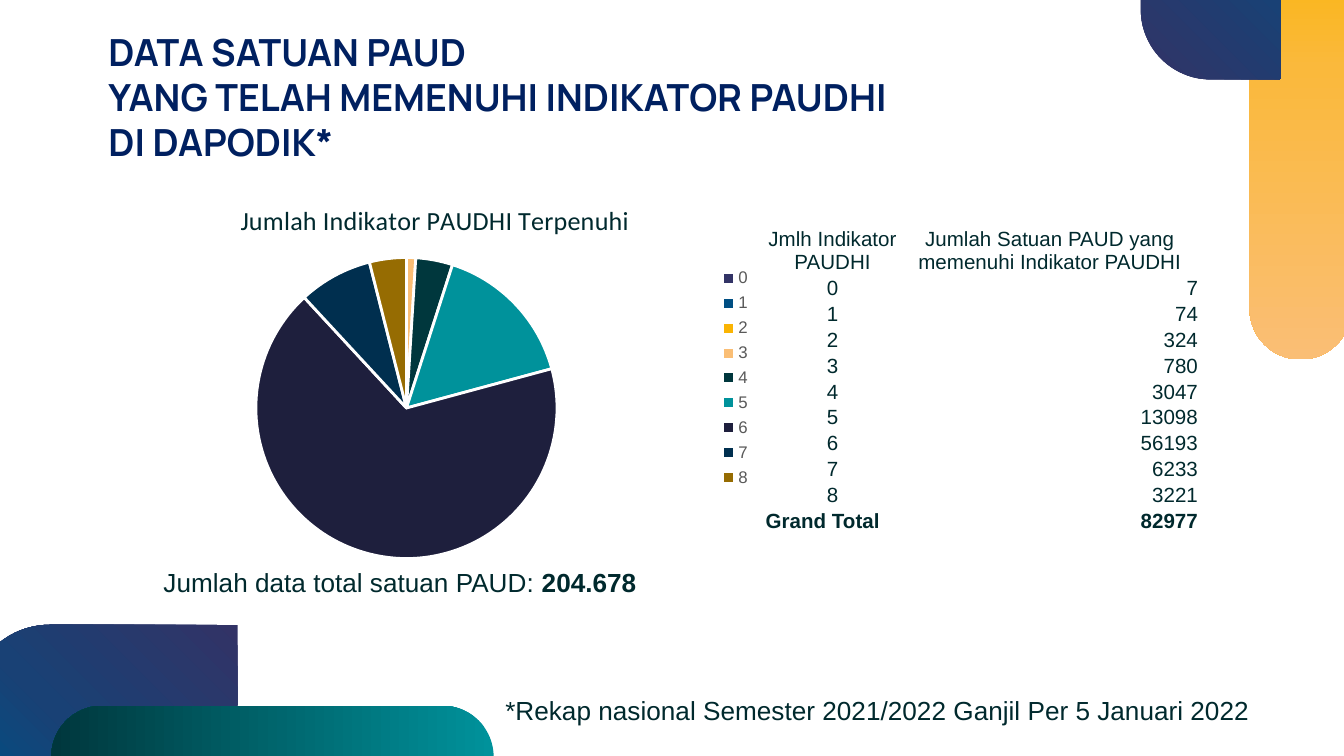
"""Build a slide on early-childhood units that meet the PAUDHI indicators."""
from dataclasses import dataclass
from typing import Optional

from lxml import etree
from pptx import Presentation
from pptx import util as u
from pptx.chart.data import CategoryChartData
from pptx.dml.color import RGBColor
from pptx.enum import chart as charts, shapes, text
from pptx.oxml import parse_xml
from pptx.oxml.ns import nsdecls, qn


@dataclass(frozen=True)
class Theme:
    heading: str = "002060"
    body: str = "00292D"
    chart_title: str = "00292E"
    legend: str = "595959"
    white: str = "FFFFFF"
    navy: tuple = ((0, "323366"), (63, "194175"), (100, "004F83"))
    teal: tuple = ((0, "00929B"), (100, "00373D"))
    amber: tuple = ((0, "FAB403"), (34, "FAB93C"), (100, "FABE75"))
    slices: tuple = ("323366", "004F83", "FAB403", "FABE75", "00373D",
                     "00929B", "1E1F3D", "002F4F", "966C02")
    heading_font: str = "Manrope"
    chart_title_font: str = "Calibri"
    body_font: str = "Arial"
    heading_size: int = 20
    note_size: int = 14
    table_size: int = 11
    legend_size: int = 9


@dataclass(frozen=True)
class Box:
    left: float
    top: float
    width: float
    height: float

    def lengths(self) -> tuple:
        return tuple(u.Cm(n) for n in (self.left, self.top, self.width, self.height))


@dataclass(frozen=True)
class Ornament:
    box: Box
    preset: shapes.MSO_SHAPE
    stops: tuple
    angle: int
    rotation: int = 0


@dataclass(frozen=True)
class Note:
    box: Box
    lines: tuple
    size: int
    font: str
    color: str
    bold: bool = False
    strong_ending: Optional[str] = None


THEME = Theme()
PRESETS = shapes.MSO_SHAPE
ORNAMENTS = (
    Ornament(Box(-0.56, 11.81, 5.05, 3.0), PRESETS.ROUND_2_DIAG_RECTANGLE, THEME.navy, 135),
    Ornament(Box(0.97, 13.34, 8.36, 1.93), PRESETS.ROUNDED_RECTANGLE, THEME.teal, 180),
    Ornament(Box(20.4, 1.65, 8.36, 1.93), PRESETS.ROUNDED_RECTANGLE, THEME.amber, 180, 270),
    Ornament(Box(21.56, -2.39, 2.64, 3.89), PRESETS.ROUND_1_RECTANGLE, THEME.navy, 135, 180),
)
HEADING = Note(
    Box(1.8, 0.43, 16.05, 2.82),
    ("DATA SATUAN PAUD", "YANG TELAH MEMENUHI INDIKATOR PAUDHI", "DI DAPODIK*"),
    THEME.heading_size, THEME.heading_font, THEME.heading, bold=True)
TOTAL = Note(Box(2.84, 10.59, 10.59, 0.86), ("Jumlah data total satuan PAUD: ",),
             THEME.note_size, THEME.body_font, THEME.body, strong_ending="204.678")
FOOTNOTE = Note(Box(9.3, 13.0, 17.73, 0.86),
                ("*Rekap nasional Semester 2021/2022 Ganjil Per 5 Januari 2022",),
                THEME.note_size, THEME.body_font, THEME.body)
UNIT_COUNTS = (7, 74, 324, 780, 3047, 13098, 56193, 6233, 3221)
PERCENTAGES = (0, 0, 0, 1, 4, 16, 68, 8, 4)


def style_font(font, size: int, name: str, color: str, bold: bool = False) -> None:
    """Apply size, typeface, colour and weight to a font."""
    font.size, font.name, font.bold = u.Pt(size), name, bold
    font.color.rgb = RGBColor.from_string(color)


def draw_ornament(slide, ornament: Ornament) -> None:
    """Draw a rounded corner ornament with a linear gradient."""
    corner = slide.shapes.add_shape(ornament.preset, *ornament.box.lengths())
    corner.adjustments[0] = 0.5
    corner.rotation = ornament.rotation
    corner.shadow.inherit = False
    corner.line.fill.background()
    stops = "".join(f'<a:gs pos="{pos * 1000}"><a:srgbClr val="{color}"/></a:gs>'
                    for pos, color in ornament.stops)
    gradient = parse_xml(
        f'<a:gradFill {nsdecls("a")} rotWithShape="1"><a:gsLst>{stops}</a:gsLst>'
        f'<a:lin ang="{ornament.angle * 60000}" scaled="0"/></a:gradFill>')
    corner._element.spPr.find(qn("a:prstGeom")).addnext(gradient)


def draw_note(slide, note: Note) -> None:
    """Draw a text box with one paragraph for each line."""
    frame = slide.shapes.add_textbox(*note.box.lengths()).text_frame
    frame.word_wrap = True
    frame.text = "\n".join(note.lines)
    if note.strong_ending:
        frame.paragraphs[-1].add_run().text = note.strong_ending
    for paragraph in frame.paragraphs:
        for run in paragraph.runs:
            bold = note.bold or run.text == note.strong_ending
            style_font(run.font, note.size, note.font, note.color, bold)


def place_part(part, index: int, **fractions: float) -> None:
    """Give a chart part a manual layout in fractions of the chart."""
    for old in part.findall(qn("c:layout")):
        part.remove(old)
    layout = parse_xml(f'<c:layout {nsdecls("c")}><c:manualLayout/></c:layout>')
    if "w" in fractions:
        etree.SubElement(layout[0], qn("c:layoutTarget")).set("val", "inner")
    for axis in ("x", "y"):
        etree.SubElement(layout[0], qn(f"c:{axis}Mode")).set("val", "edge")
    for key, fraction in fractions.items():
        etree.SubElement(layout[0], qn(f"c:{key}")).set("val", str(fraction))
    part.insert(index, layout)


def draw_indicator_pie(slide, box: Box) -> None:
    """Draw the share of units by number of indicators met."""
    shares = CategoryChartData()
    shares.categories = [str(n) for n in range(len(PERCENTAGES))]
    shares.add_series("Series 1", PERCENTAGES)
    pie = slide.shapes.add_chart(charts.XL_CHART_TYPE.PIE, *box.lengths(), shares).chart
    style_font(pie.font, 10, THEME.body_font, "000000")
    pie.has_title = True
    heading = pie.chart_title.text_frame
    heading.text = "Jumlah Indikator PAUDHI Terpenuhi"
    style_font(heading.paragraphs[0].runs[0].font, THEME.note_size,
               THEME.chart_title_font, THEME.chart_title)
    place_part(pie.chart_title._element, 1, x=0.21, y=0.05)
    place_part(pie._chartSpace.chart.plotArea, 0, x=0.24, y=0.2, w=0.45, h=0.75)
    pie.has_legend = True
    pie.legend.position = charts.XL_LEGEND_POSITION.RIGHT
    pie.legend.include_in_layout = False
    style_font(pie.legend.font, THEME.legend_size, THEME.body_font, THEME.legend)
    pie.plots[0].vary_by_categories = True
    for index, color in enumerate(THEME.slices):
        wedge = pie.plots[0].series[0].points[index].format
        wedge.fill.solid()
        wedge.fill.fore_color.rgb = RGBColor.from_string(color)
        wedge.line.color.rgb = RGBColor.from_string(THEME.white)
        wedge.line.width = u.Pt(1.5)


def draw_unit_table(slide, box: Box) -> None:
    """Draw the count of units by number of indicators met."""
    header = ("Jmlh Indikator PAUDHI", "Jumlah Satuan PAUD yang memenuhi Indikator PAUDHI")
    total = ("Grand Total", str(sum(UNIT_COUNTS)))
    rows = [header, *((str(n), str(count)) for n, count in enumerate(UNIT_COUNTS)), total]
    units = slide.shapes.add_table(len(rows), 2, *box.lengths()).table
    units.first_row = units.horz_banding = False
    units.columns[0].width, units.columns[1].width = u.Cm(2.57), u.Cm(5.64)
    align = text.PP_ALIGN
    for r, row in enumerate(rows):
        units.rows[r].height = u.Cm(0.86 if row is header else 0.49)
        first = align.LEFT if row is total else align.CENTER
        second = align.CENTER if row is header else align.RIGHT
        for c, (words, alignment) in enumerate(zip(row, (first, second))):
            cell = units.cell(r, c)
            cell.fill.background()
            cell.vertical_anchor = text.MSO_ANCHOR.BOTTOM
            cell.margin_left = cell.margin_right = cell.margin_top = u.Cm(0.02)
            cell.margin_bottom = 0
            cell.text_frame.text = words
            paragraph = cell.text_frame.paragraphs[0]
            paragraph.alignment = alignment
            style_font(paragraph.runs[0].font, THEME.table_size, THEME.body_font,
                       THEME.body, row is total)


def main() -> None:
    """Assemble and save the slide."""
    deck = Presentation()
    deck.slide_width, deck.slide_height = u.Cm(25.4), u.Cm(14.29)
    slide = deck.slides.add_slide(deck.slide_layouts[6])
    for ornament in ORNAMENTS:
        draw_ornament(slide, ornament)
    draw_note(slide, HEADING)
    draw_indicator_pie(slide, Box(1.8, 3.35, 12.65, 7.59))
    draw_unit_table(slide, Box(14.45, 4.22, 8.21, 5.76))
    draw_note(slide, TOTAL)
    draw_note(slide, FOOTNOTE)
    deck.save("out.pptx")


if __name__ == "__main__":
    main()
